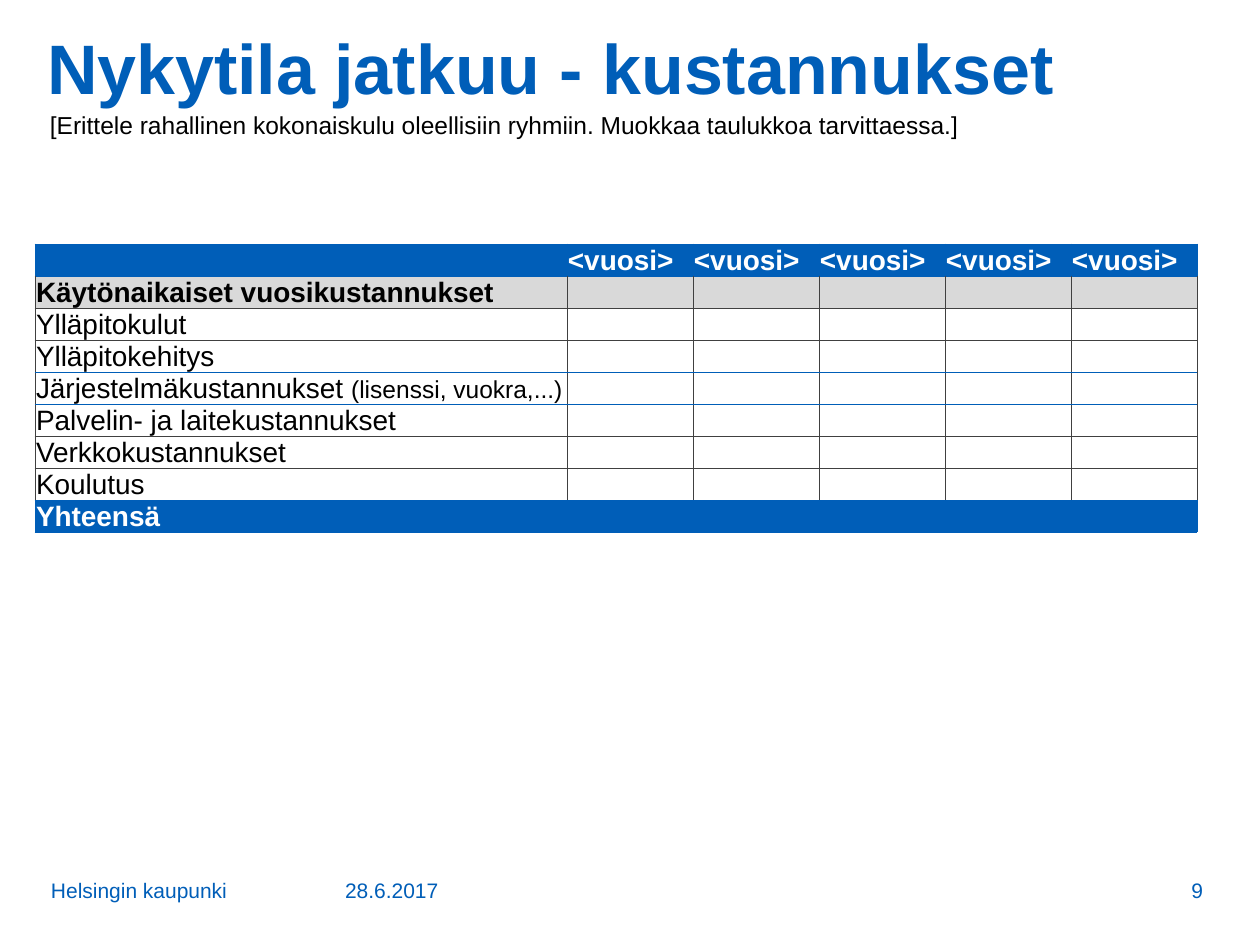
from dataclasses import dataclass

from lxml.etree import SubElement
from pptx import Presentation
from pptx.dml.color import RGBColor
from pptx.enum.text import MSO_ANCHOR, MSO_AUTO_SIZE, PP_ALIGN
from pptx.oxml.ns import qn
from pptx.util import Emu, Pt

BLUE = RGBColor(0x00, 0x5E, 0xB8)
GREY = RGBColor(0xD9, 0xD9, 0xD9)
DARK = RGBColor(0x40, 0x40, 0x40)
BLACK = RGBColor(0x00, 0x00, 0x00)
WHITE = RGBColor(0xFF, 0xFF, 0xFF)
FONT = "Arial"
PX_PER_INCH = 126
LABEL_WIDTH, YEAR_WIDTH, ROW_HEIGHT, YEARS = 532, 126, 32, 5


@dataclass(frozen=True)
class Box:
    left: int
    top: int
    width: int
    height: int


@dataclass(frozen=True)
class Label:
    text: str
    box: Box
    size: int = 12
    color: RGBColor = BLUE
    anchor: MSO_ANCHOR = MSO_ANCHOR.BOTTOM
    align: PP_ALIGN = PP_ALIGN.LEFT
    inset: tuple[int, int] = (12, 6)


@dataclass(frozen=True)
class CostRow:
    label: str
    detail: str = ""
    year: str = ""
    fill: RGBColor = WHITE
    color: RGBColor = BLACK
    bold: bool = False
    rule: RGBColor = DARK


LABELS = [
    Label("28.6.2017", Box(333, 860, 195, 49)),
    Label("Helsingin kaupunki", Box(39, 845, 294, 64)),
    Label("9", Box(1066, 860, 149, 49), align=PP_ALIGN.RIGHT),
    Label("[Erittele rahallinen kokonaiskulu oleellisiin ryhmiin. Muokkaa taulukkoa tarvittaessa.]",
          Box(45, 105, 1160, 40), 14, BLACK, MSO_ANCHOR.TOP, inset=(5, 5)),
]
ROWS = [
    CostRow("", year="<vuosi>", fill=BLUE, color=WHITE, bold=True, rule=BLUE),
    CostRow("Käytönaikaiset vuosikustannukset", fill=GREY, bold=True),
    CostRow("Ylläpitokulut"),
    CostRow("Ylläpitokehitys"),
    CostRow("Järjestelmäkustannukset ", "(lisenssi, vuokra,...)", rule=BLUE),
    CostRow("Palvelin- ja laitekustannukset"),
    CostRow("Verkkokustannukset"),
    CostRow("Koulutus"),
    CostRow("Yhteensä", fill=BLUE, color=WHITE, bold=True, rule=BLUE),
]


def px(length: int) -> Emu:
    """Turn pixels into EMU."""
    return Emu(round(length * 914400 / PX_PER_INCH))


def place(shape, box: Box) -> None:
    """Move and size a shape."""
    shape.left, shape.top = px(box.left), px(box.top)
    shape.width, shape.height = px(box.width), px(box.height)


def format_run(run, size: int, color: RGBColor, bold: bool = False) -> None:
    """Set the font of a run."""
    run.font.name, run.font.size, run.font.bold = FONT, Pt(size), bold
    run.font.color.rgb = color


def add_title(slide, text: str, box: Box) -> None:
    """Fill and format the title placeholder."""
    title = slide.shapes.title
    place(title, box)
    frame = title.text_frame
    frame.text = text
    frame.auto_size = MSO_AUTO_SIZE.NONE
    frame.vertical_anchor = MSO_ANCHOR.TOP
    frame.margin_left = frame.margin_right = px(12)
    frame.margin_top = px(6)
    paragraph = frame.paragraphs[0]
    paragraph.alignment, paragraph.line_spacing = PP_ALIGN.LEFT, 0.85
    format_run(paragraph.runs[0], 40, BLUE, True)


def add_label(slide, label: Label) -> None:
    """Add a one-line text box."""
    shape = slide.shapes.add_textbox(0, 0, 0, 0)
    place(shape, label.box)
    frame = shape.text_frame
    frame.word_wrap = True
    frame.vertical_anchor = label.anchor
    frame.margin_left = frame.margin_right = px(label.inset[0])
    frame.margin_top = frame.margin_bottom = px(label.inset[1])
    frame.text = label.text
    paragraph = frame.paragraphs[0]
    paragraph.alignment = label.align
    format_run(paragraph.runs[0], label.size, label.color)


def set_borders(cell, sides: dict[str, RGBColor]) -> None:
    """Draw thin cell borders, placed before the fill."""
    properties = cell._tc.get_or_add_tcPr()
    for index, (side, color) in enumerate(sides.items()):
        line = SubElement(properties, qn(f"a:ln{side}"), w=str(Pt(0.5)))
        SubElement(SubElement(line, qn("a:solidFill")), qn("a:srgbClr"), val=str(color))
        properties.insert(index, line)


def fill_cell(cell, row: CostRow, text: str, detail: str) -> None:
    """Set the fill, margins and text of a cell."""
    cell.fill.solid()
    cell.fill.fore_color.rgb = row.fill
    cell.vertical_anchor = MSO_ANCHOR.BOTTOM
    cell.margin_left = cell.margin_right = px(1)
    cell.margin_top = cell.margin_bottom = 0
    paragraph = cell.text_frame.paragraphs[0]
    for part, size in ((text, 16), (detail, 14)):
        if part:
            run = paragraph.add_run()
            run.text = part
            format_run(run, size, row.color, row.bold)
    if not text:
        ending = SubElement(paragraph._p, qn("a:endParaRPr"), sz="1400")
        SubElement(ending, qn("a:latin"), typeface=FONT)


def add_cost_table(slide, left: int, top: int) -> None:
    """Add the yearly cost table."""
    width = LABEL_WIDTH + YEARS * YEAR_WIDTH
    table = slide.shapes.add_table(len(ROWS), YEARS + 1, px(left), px(top),
                                   px(width), px(ROW_HEIGHT * len(ROWS))).table
    table.horz_banding = False
    for index, column in enumerate(table.columns):
        column.width = px(YEAR_WIDTH if index else LABEL_WIDTH)
    for index, row in enumerate(ROWS):
        table.rows[index].height = px(ROW_HEIGHT)
        above, below = ROWS[max(index - 1, 0)], ROWS[min(index + 1, len(ROWS) - 1)]
        side = BLUE if row.fill == BLUE else DARK
        sides = {
            "L": side,
            "R": side,
            "T": BLUE if BLUE in (row.rule, above.rule) else DARK,
            "B": BLUE if BLUE in (row.rule, below.rule) else DARK,
        }
        for column in range(YEARS + 1):
            cell = table.cell(index, column)
            text, detail = (row.year, "") if column else (row.label, row.detail)
            fill_cell(cell, row, text, detail)
            set_borders(cell, sides)


def main() -> None:
    """Build and save the presentation."""
    presentation = Presentation()
    presentation.slide_width, presentation.slide_height = px(1260), px(945)
    slide = presentation.slides.add_slide(presentation.slide_layouts[5])
    add_title(slide, "Nykytila jatkuu - kustannukset", Box(35, 31, 1162, 105))
    add_cost_table(slide, 35, 244)
    for label in LABELS:
        add_label(slide, label)
    presentation.save("out.pptx")


if __name__ == "__main__":
    main()
